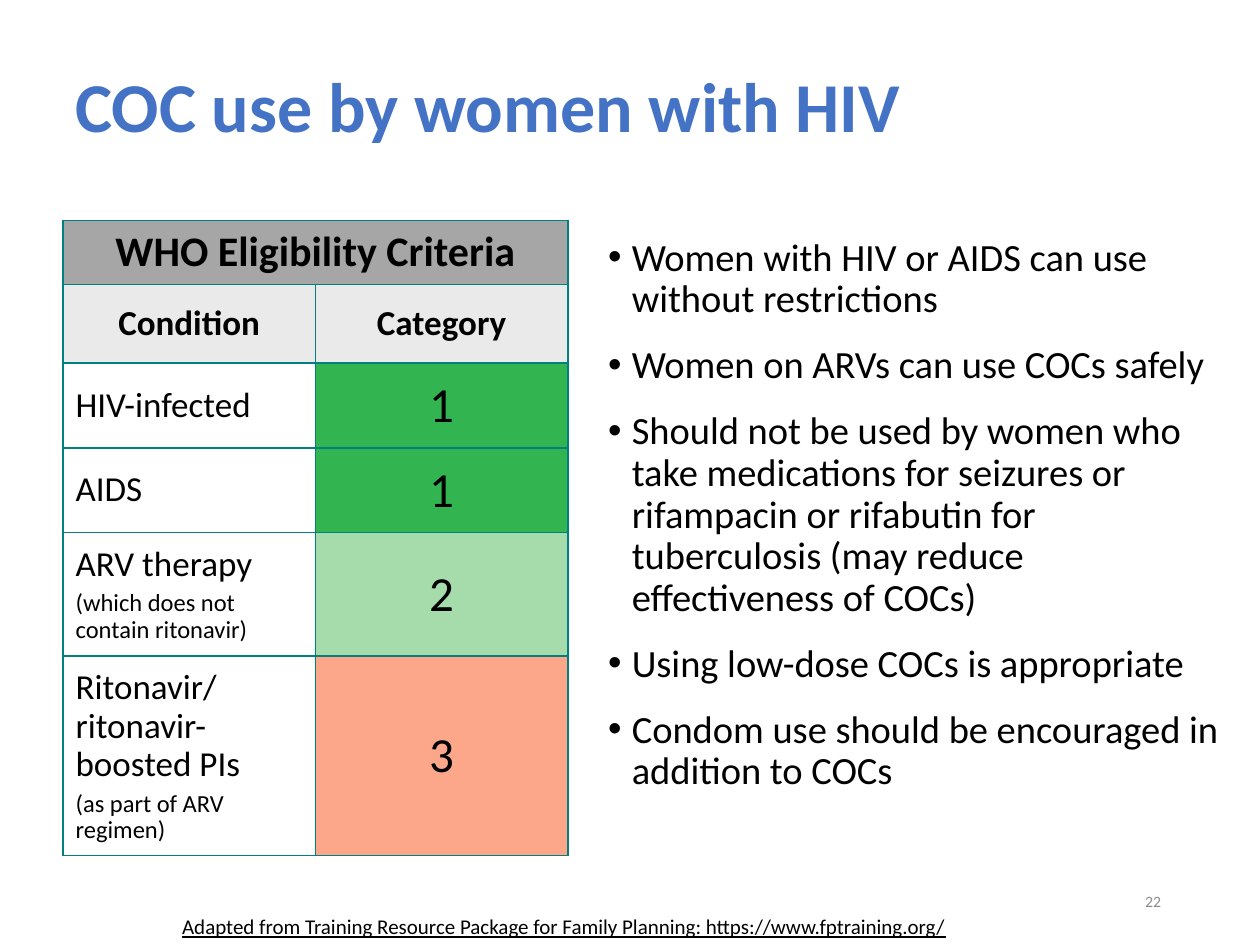
from pptx import Presentation
from pptx.dml.color import RGBColor as RGB
from pptx.enum.text import MSO_ANCHOR as Anchor, PP_ALIGN as Align
from pptx.oxml import parse_xml
from pptx.oxml.ns import nsdecls
from pptx.util import Pt

BLUE = RGB(0x44, 0x72, 0xC4)
BLACK = RGB(0, 0, 0)
GREY = RGB(0x8C, 0x8C, 0x8C)
DARK = RGB(0xA6, 0xA6, 0xA6)
LIGHT = RGB(0xEA, 0xEA, 0xEA)
GREEN = RGB(0x32, 0xB4, 0x50)
MINT = RGB(0xA6, 0xDB, 0xAB)
CORAL = RGB(0xFC, 0xA7, 0x89)
TEAL = RGB(0, 0x80, 0x80)

deck = Presentation()
deck.slide_width, deck.slide_height = Pt(720), Pt(540)
slide = deck.slides.add_slide(deck.slide_layouts[6])


def style(para, size, color=BLACK, bold=False, align=Align.LEFT, space=None):
    para.alignment = align
    para.line_spacing = space
    for run in para.runs:
        font = run.font
        font.name, font.size, font.bold = "Calibri", Pt(size), bold
        font.color.rgb = color


def add_box(left, top, width, height, text, anchor=Anchor.TOP):
    box = slide.shapes.add_textbox(Pt(left), Pt(top), Pt(width), Pt(height))
    frame = box.text_frame
    frame.word_wrap = True
    frame.vertical_anchor = anchor
    frame.text = text
    return frame


# Title
title = add_box(36, 18, 648, 90, "COC use by women with HIV", Anchor.MIDDLE)
style(title.paragraphs[0], 40, BLUE, bold=True, space=0.9)

# Bullet list
points = [
    "Women with HIV or AIDS can use without restrictions",
    "Women on ARVs can use COCs safely",
    "Should not be used by women who take medications for seizures or "
    "rifampacin or rifabutin for tuberculosis (may reduce effectiveness of COCs)",
    "Using low-dose COCs is appropriate",
    "Condom use should be encouraged in addition to COCs",
]
body = add_box(340.5, 132.5, 365, 363, "\n".join(points))
for i, para in enumerate(body.paragraphs):
    style(para, 22, space=0.9)
    para.space_before = Pt(14 if i else 0)
    props = para._p.get_or_add_pPr()
    props.set("marL", str(Pt(13.5)))
    props.set("indent", str(Pt(-13.5)))
    props.append(parse_xml(f'<a:buFont {nsdecls("a")} typeface="Arial"/>'))
    props.append(parse_xml(f'<a:buChar {nsdecls("a")} char="•"/>'))

# Criteria table: row height, condition, category, category fill
rows = [
    (36.5, "WHO Eligibility Criteria", "", DARK),
    (45, "Condition", "Category", LIGHT),
    (48.5, "HIV-infected", "1", GREEN),
    (48.5, "AIDS", "1", GREEN),
    (70.5, "ARV therapy\n(which does not contain ritonavir)", "2", MINT),
    (114, "Ritonavir/ ritonavir-boosted PIs\n(as part of ARV regimen)", "3", CORAL),
]
grid = slide.shapes.add_table(len(rows), 2, Pt(36), Pt(126), Pt(288.5), Pt(363)).table
for col in grid.columns:
    col.width = Pt(144.25)
grid.cell(0, 0).merge(grid.cell(0, 1))

for r, (height, left, right, fill) in enumerate(rows):
    grid.rows[r].height = Pt(height)
    head = r < 2
    for c, text in enumerate((left, right)):
        cell = grid.cell(r, c)
        cell.text = text
        cell.margin_left = cell.margin_right = Pt(7.2)
        cell.margin_top = cell.margin_bottom = Pt(3.6 if head else 7.2)
        cell.vertical_anchor = Anchor.TOP if "\n" in text else Anchor.MIDDLE
        if head or c:
            cell.fill.solid()
            cell.fill.fore_color.rgb = fill
        else:
            cell.fill.background()

        # Text: first line large, remark below it small
        for i, para in enumerate(cell.text_frame.paragraphs):
            if head:
                style(para, 20 if r else 24, bold=True, align=Align.CENTER)
            elif c:
                style(para, 28, align=Align.CENTER)
            else:
                style(para, 14 if i else 20, space=0.9)
            para.space_before = Pt(3.5 if i else 0)

        # Borders
        props = cell._tc.get_or_add_tcPr()
        for n, side in enumerate(("lnL", "lnR", "lnT", "lnB")):
            props.insert(n, parse_xml(
                f'<a:{side} {nsdecls("a")} w="{Pt(1)}"><a:solidFill>'
                f'<a:srgbClr val="{TEAL}"/></a:solidFill></a:{side}>'))

# Page number
number = add_box(508.5, 500.5, 162, 29, "22", Anchor.MIDDLE)
style(number.paragraphs[0], 9, GREY, align=Align.RIGHT)

# Credit line
credit = add_box(97, 518.5, 500, 19.5,
                 "Adapted from Training Resource Package for Family Planning: "
                 "https://www.fptraining.org/")
style(credit.paragraphs[0], 12)
credit.paragraphs[0].runs[0].font.underline = True

deck.save("out.pptx")
